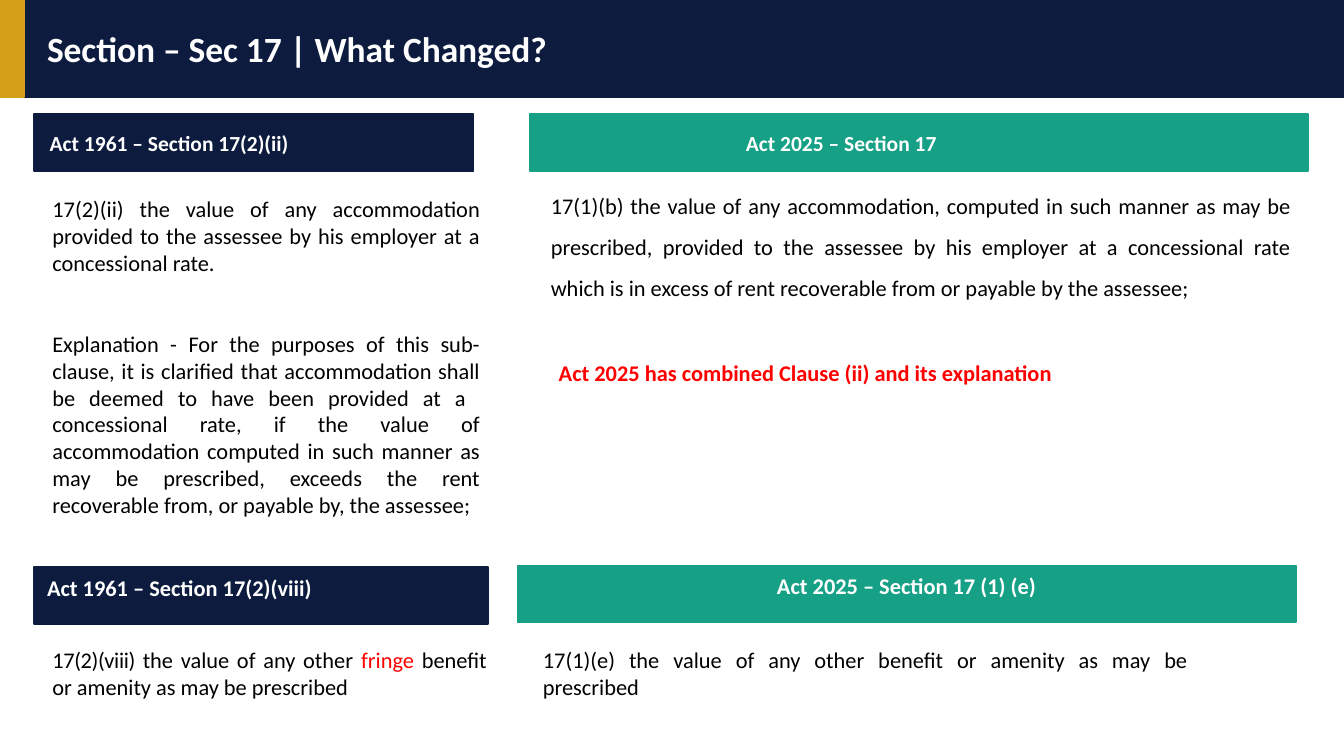
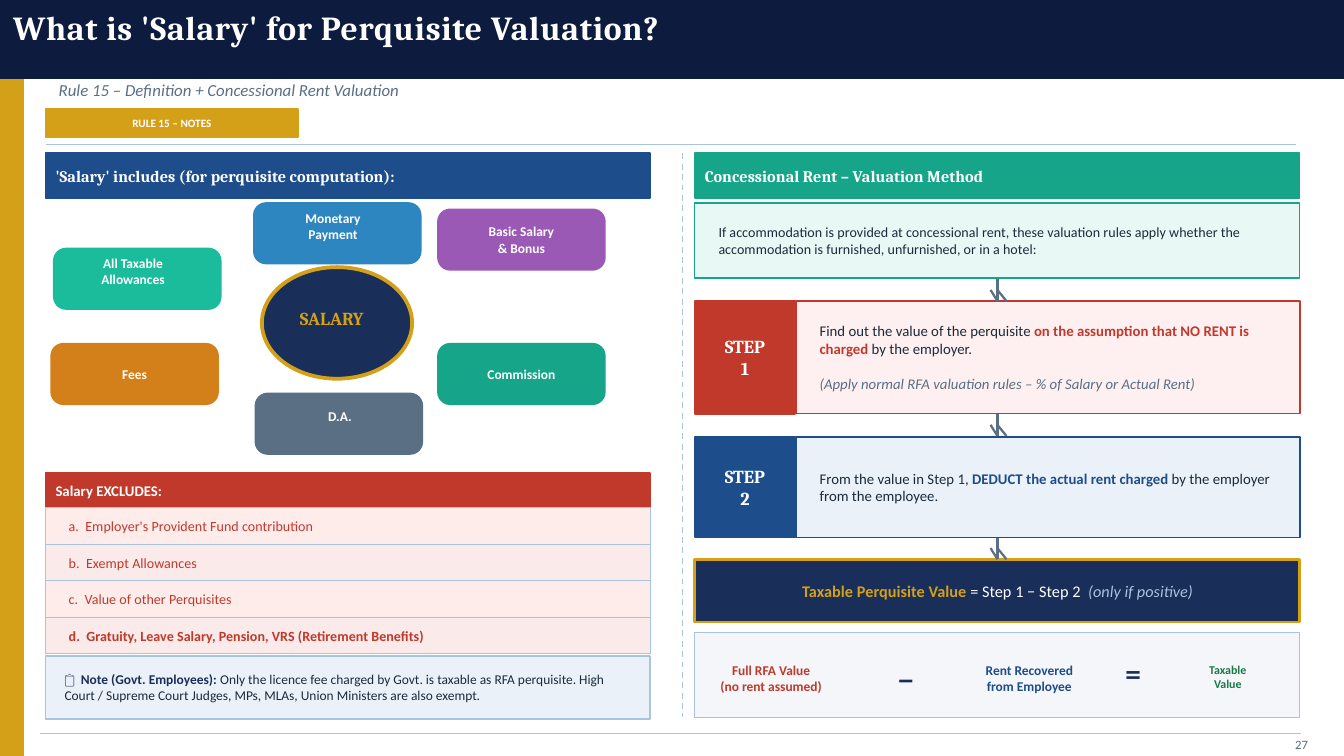
"""Build two slides on perquisite valuation: Section 17 changes and the meaning of salary."""
from lxml.etree import SubElement
from pptx import Presentation
from pptx.dml.color import RGBColor
from pptx.enum.dml import MSO_LINE
from pptx.enum.shapes import MSO_CONNECTOR, MSO_SHAPE
from pptx.enum.text import MSO_ANCHOR, PP_ALIGN
from pptx.oxml.ns import qn
from pptx.util import Cm, Pt

C = {
    "navy": "0D1B3E", "deep": "1A2E5A", "blue": "1E4D8C", "sky": "2E86C1",
    "gold": "D4A017", "orange": "D4801A", "purple": "9B59B6", "slate": "5A6F84",
    "teal": "16A085", "green": "17A589", "mint": "1ABC9C", "forest": "1A7A4A",
    "red": "C0392B", "alert": "FF0000", "rule": "A8C4E0", "ink": "1C2B3A",
    "black": "000000", "white": "FFFFFF", "rose": "FDECEA", "blush": "FAEAEA",
    "pink": "FEF0F0", "ice": "EAF1F8", "foam": "E8F8F5", "mist": "F4F6F9",
}
LEFT, CENTER, RIGHT, JUSTIFY = PP_ALIGN.LEFT, PP_ALIGN.CENTER, PP_ALIGN.RIGHT, PP_ALIGN.JUSTIFY
TOP, MIDDLE = MSO_ANCHOR.TOP, MSO_ANCHOR.MIDDLE
INSET = (0.25, 0.13, 0.25, 0.13)
FLUSH = (0, 0, 0, 0)
BODY = {"size": 12, "color": "black"}
BAR = {"size": 12, "color": "white", "bold": True}
HEAD = {"size": 8.7, "color": "white", "bold": True, "name": "Cambria"}
PILL = {"size": 7.2, "color": "white", "bold": True}
STEP = {"size": 9.8, "color": "white", "bold": True, "name": "Cambria"}
SIGN = {"size": 15, "color": "deep", "bold": True, "name": "Cambria"}


def box(s, at, fill=None, line=None, width=1, kind=MSO_SHAPE.RECTANGLE):
    """Add a filled shape, or a text box when no fill is given."""
    at = [Cm(v) for v in at]
    if not fill:
        return s.shapes.add_textbox(*at)
    sp = s.shapes.add_shape(kind, *at)
    sp.shadow.inherit = False
    sp.fill.solid()
    sp.fill.fore_color.rgb = RGBColor.from_string(C[fill])
    sp.line.color.rgb = RGBColor.from_string(C[line or fill])
    sp.line.width = Pt(width)
    if kind == MSO_SHAPE.ROUNDED_RECTANGLE:
        sp.adjustments[0] = 0.2
    return sp


def write(sp, paras, base, align=LEFT, anchor=MIDDLE, inset=INSET, gap=0, spacing=None):
    """Fill a shape with paragraphs, each a string or a list of (text, format) runs."""
    tf = sp.text_frame
    tf.word_wrap, tf.vertical_anchor = True, anchor
    for side, v in zip(("left", "top", "right", "bottom"), inset):
        setattr(tf, f"margin_{side}", Cm(v))
    for i, para in enumerate(paras):
        p = tf.add_paragraph() if i else tf.paragraphs[0]
        p.alignment = align
        if i and gap:
            p.space_before = Pt(gap)
        if spacing:
            p.line_spacing = Pt(spacing)
        for text, extra in [(para, {})] if isinstance(para, str) else para:
            r = p.add_run()
            r.text = text
            fmt = {"name": "Calibri", **base, **extra}
            r.font.color.rgb = RGBColor.from_string(C[fmt.pop("color")])
            r.font.size = Pt(fmt.pop("size"))
            if "spc" in fmt:
                r.font._element.set("spc", str(fmt.pop("spc")))
            for key, v in fmt.items():
                setattr(r.font, key, v)


prs = Presentation()
prs.slide_width, prs.slide_height = Cm(25.4), Cm(14.29)

s = prs.slides.add_slide(prs.slide_layouts[6])
box(s, (0, 0, 25.4, 1.83), "navy")
box(s, (0, 0, 0.46, 1.83), "gold")
write(box(s, (0.89, 0, 21.59, 1.83)), ["Section – Sec 17 | What Changed?"],
      {**BAR, "size": 19}, inset=FLUSH)

for x, w, fill, align, text in [
    (0.64, 8.31, "navy", LEFT, "Act 1961 – Section 17(2)(ii)"),
    (10.01, 14.71, "teal", CENTER, "Act 2025 – Section 17"),
]:
    box(s, (x, 2.16, w, 1.07), fill)
    write(box(s, (x + 0.3, 2.16, 11.18, 1.07)), [text], {**BAR, "size": 11.5}, align, inset=FLUSH)

for at, fill, align, text in [
    ((0.64, 10.72, 8.59, 1.07), "navy", LEFT, "Act 1961 – Section 17(2)(viii)"),
    ((9.78, 10.69, 14.71, 1.07), "teal", CENTER, "Act 2025 – Section 17 (1) (e)"),
]:
    write(box(s, at, fill), [text], BAR, align, TOP)

for at, paras, gap, spacing in [
    ((0.74, 3.56, 8.59, 6.4), [
        "17(2)(ii) the value of any accommodation provided to the assessee by his employer "
        "at a concessional rate.",
        "Explanation - For the purposes of this sub-clause, it is clarified that accommodation "
        "shall be deemed to have been provided at a  concessional rate, if the value of "
        "accommodation computed in such manner as may be prescribed, exceeds the rent "
        "recoverable from, or payable by, the assessee;"], 29, None),
    ((10.16, 3.23, 14.5, 7.62), [
        "17(1)(b) the value of any accommodation, computed in such manner as may be prescribed, "
        "provided to the assessee by his employer at a concessional rate which is in excess of "
        "rent recoverable from or payable by the assessee;"], 0, 22),
    ((0.74, 12.09, 8.71, 1.27), [[
        ("17(2)(viii) ", {"spc": -20}), ("the value of any other ", {}),
        ("fringe", {"color": "alert"}), (" benefit or amenity as may be prescribed", {})]], 0, None),
    ((10.01, 12.09, 12.7, 1.27), [
        "17(1)(e) the value of any other benefit or amenity as may be prescribed"], 0, None),
]:
    write(box(s, at), paras, BODY, JUSTIFY, TOP, gap=gap, spacing=spacing)
write(box(s, (10.31, 6.65, 13.39, 2.57)), ["Act 2025 has combined Clause (ii) and its explanation"],
      {**BODY, "color": "alert", "bold": True}, anchor=TOP)

s = prs.slides.add_slide(prs.slide_layouts[6])
X1, X2, W, TW = 0.86, 13.13, 11.43, 11.05
box(s, (0, 0, 0.43, 14.29), "gold")
write(box(s, (X1, 1.4, 19.05, 0.58)), ["Rule 15 – Definition + Concessional Rent Valuation"],
      {"size": 9, "color": "slate", "italic": True})
tag = (X1, 2.06, 4.78, 0.53)
box(s, tag, "gold")
write(box(s, tag), ["RULE 15 – NOTES"], {**PILL, "size": 6}, CENTER, inset=FLUSH)

for x, y, h, fill, text, fmt in [
    (X1, 2.9, 0.84, "blue", "'Salary' includes (for perquisite computation):", HEAD),
    (X2, 2.9, 0.84, "green", "Concessional Rent – Valuation Method", HEAD),
    (X1, 8.94, 0.66, "red", "Salary EXCLUDES:", {**PILL, "size": 7.9}),
]:
    box(s, (x, y, W, h), fill)
    write(box(s, (x + 0.19, y, TW, h)), [text], fmt, inset=FLUSH)

box(s, (4.95, 5.05, 2.84, 2.11), "deep", "gold", 2, MSO_SHAPE.OVAL)
write(box(s, (4.85, 3.96, 2.84, 2.84)), ["SALARY"], {**STEP, "color": "gold"}, CENTER,
      inset=(0.25, 1.42, 0.25, 0.13))
for x, y, dx, dy, fill, lines in [
    (8.28, 3.96, 0, 0, "purple", ["Basic Salary", "& Bonus"]),
    (8.28, 6.5, 0, 0, "green", ["Commission"]),
    (4.83, 7.44, 0.02, -0.15, "slate", ["D.A."]),
    (0.97, 6.5, 0, 0, "orange", ["Fees"]),
    (1.02, 4.7, -0.08, -0.15, "mint", ["All Taxable", "Allowances"]),
    (4.8, 3.84, -0.08, -0.13, "sky", ["Monetary", "Payment"]),
]:
    box(s, (x, y, 3.15, 1.14), fill, kind=MSO_SHAPE.ROUNDED_RECTANGLE)
    write(box(s, (x + dx, y + dy, 3.15, 1.14)), lines, PILL, CENTER)

for i, text in enumerate([
    "Employer's Provident Fund contribution", "Exempt Allowances", "Value of other Perquisites",
    "Gratuity, Leave Salary, Pension, VRS (Retirement Benefits)",
]):
    y = 9.6 + i * 0.69
    box(s, (X1, y, W, 0.69), ("rose", "blush")[i % 2], "rule", 0.4)
    write(box(s, (X1 + 0.19, y, TW, 0.69)), [f"{'abcd'[i]}.  {text}"],
          {"size": 7.5, "color": "red", "bold": i == 3})

box(s, (X1, 12.4, W, 1.19), "ice", "rule", 0.8)
write(box(s, (0.97, 12.4, TW, 1.19)), [[
    ("📋  Note (Govt. Employees): ", {"color": "deep", "bold": True}),
    ("Only the licence fee charged by Govt. is taxable as RFA perquisite. High Court / Supreme "
     "Court Judges, MPs, MLAs, Union Ministers are also exempt.", {})]],
    {"size": 7.2, "color": "ink"})

box(s, (X2, 3.84, W, 1.42), "foam", "green", 0.8)
write(box(s, (X2 + 0.2, 3.84, TW, 1.42)), [
    "If accommodation is provided at concessional rent, these valuation rules apply whether the "
    "accommodation is furnished, unfurnished, or in a hotel:"], {"size": 7.5, "color": "ink"})

for number, y, h, color, fill, paras in [
    ("1", 5.69, 2.13, "red", "pink", [
        [("Find out the value of the perquisite ", {}),
         ("on the assumption that NO RENT is charged ", {"color": "red", "bold": True}),
         ("by the employer.", {})],
        [("(Apply normal RFA valuation rules – % of Salary or Actual Rent)",
          {"color": "slate", "italic": True})]]),
    ("2", 8.26, 1.9, "blue", "ice", [
        [("From the value in Step 1, ", {}),
         ("DEDUCT the actual rent charged ", {"color": "blue", "bold": True}),
         ("by the employer from the employee.", {})]]),
]:
    box(s, (X2, y, 1.9, h), color)
    write(box(s, (X2, y, 1.9, h)), ["STEP", number], STEP, CENTER)
    box(s, (15.04, y, 9.53, h), fill, color, 0.8)
    write(box(s, (15.24, y, 9.14, h)), paras, {"size": 7.9, "color": "ink"}, gap=9.6)

box(s, (X2, 10.57, W, 1.19), "deep", "gold", 1.5)
write(box(s, (X2 + 0.2, 10.57, TW, 1.19)), [[
    ("Taxable Perquisite Value ", {"color": "gold", "bold": True}),
    ("= Step 1 − Step 2  ", {}),
    ("(only if positive)", {"color": "rule", "italic": True})]],
    {"size": 8.7, "color": "white"}, CENTER)

box(s, (X2, 11.96, W, 1.6), "mist", "rule", 0.8)
for x, y, w, lines, fmt in [
    (12.29, 12.09, 4.57, ["Full RFA Value", "(no rent assumed)"], {**PILL, "color": "red"}),
    (16.69, 12.09, 0.86, ["−"], SIGN),
    (17.22, 12.09, 4.47, ["Rent Recovered", "from Employee"], {**PILL, "color": "blue"}),
    (21.01, 11.99, 0.76, ["="], SIGN),
    (22.25, 12.07, 1.91, ["Taxable", "Value"], {**PILL, "size": 6.4, "color": "forest"}),
]:
    write(box(s, (x, y, w, 1.45)), lines, fmt, CENTER)

lines = [
    (X1, 2.74, 24.49, 2.74, "rule", 0.5, None),
    (12.9, 2.9, 12.9, 13.56, "rule", 0.8, MSO_LINE.DASH),
    (0.76, 13.87, 24.59, 13.87, "rule", 0.5, None),
]
for y in (5.28, 7.83, 10.16):
    for x1, y1, x2 in [(18.85, y, 18.85), (18.72, y + 0.2, 18.85), (18.85, y + 0.2, 19.02)]:
        lines.append((x1, y1, x2, y + 0.41, "slate", 1.2, None))
for x1, y1, x2, y2, color, width, dash in lines:
    ln = s.shapes.add_connector(MSO_CONNECTOR.STRAIGHT, Cm(x1), Cm(y1), Cm(x2), Cm(y2))
    SubElement(ln._element.spPr, qn("a:effectLst"))
    ln.line.color.rgb = RGBColor.from_string(C[color])
    ln.line.width = Pt(width)
    if dash:
        ln.line.dash_style = dash

write(box(s, (24, 13.89, 0.97, 0.38)), ["27"], {"size": 6.8, "color": "slate"}, RIGHT)
write(box(s, (0, 0, 25.4, 1.47), "navy"), ["What is 'Salary' for Perquisite Valuation?"],
      {**STEP, "size": 18, "spc": 40}, anchor=TOP)

prs.save("out.pptx")
